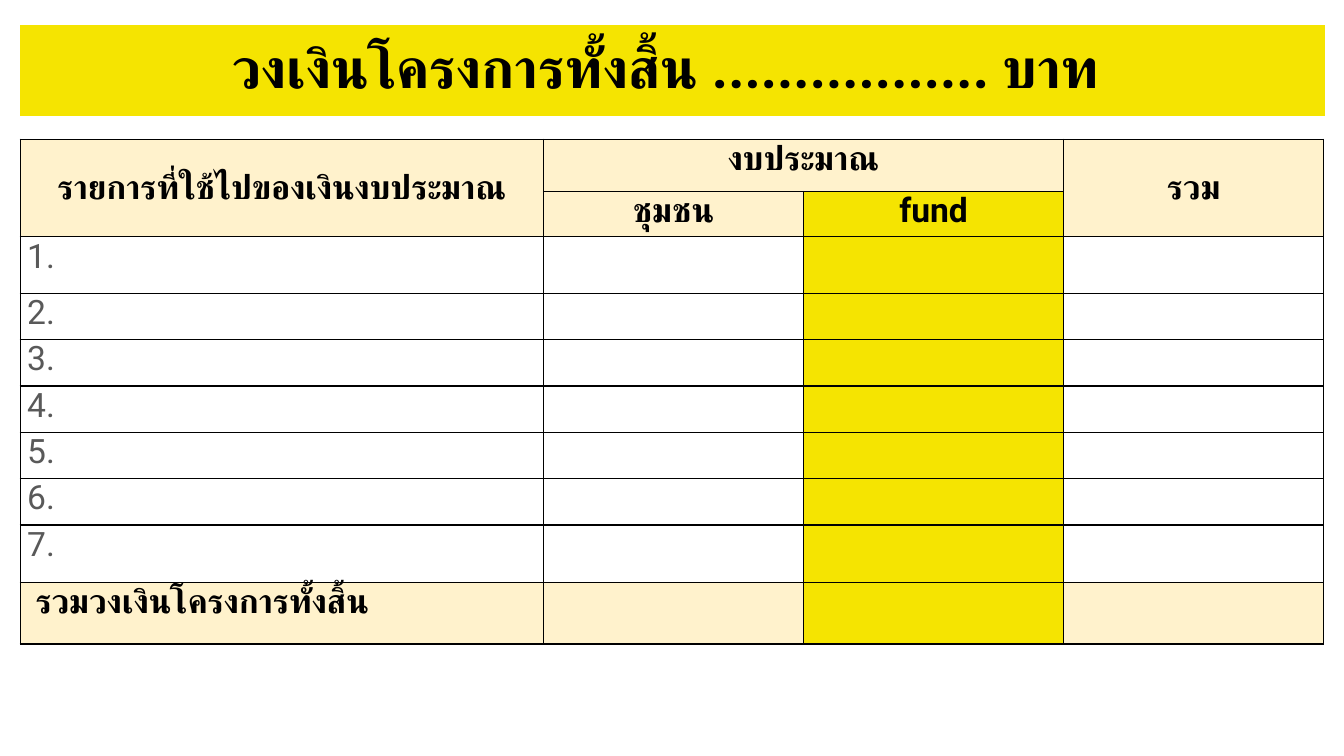
from lxml.etree import SubElement
from pptx import Presentation
from pptx.dml.color import RGBColor
from pptx.enum.shapes import MSO_SHAPE as Shape
from pptx.enum.text import MSO_ANCHOR as Anchor, PP_ALIGN as Align
from pptx.oxml.ns import qn
from pptx.util import Inches, Pt

COLORS = {"yellow": "F5E401", "cream": "FFF2CC", "black": "000000", "gray": "595959"}
FONT = "Roboto"
LEFT, WIDTH = 0.2, 12.94
COLUMNS = [5.19, 2.58, 2.58, 2.58]
ROWS = [0.52, 0.45, 0.56] + [0.46] * 5 + [0.57, 0.61]
FUND_COLUMN, TOTAL_ROW = 2, len(ROWS) - 1


class BudgetSlide:
    def __init__(self, slide):
        self.slide = slide

    def color(self, name):
        return RGBColor.from_string(COLORS[name])

    def add_text(self, frame, text, size, color="black", bold=True, align=Align.CENTER):
        paragraph = frame.paragraphs[0]
        paragraph.alignment = align
        run = paragraph.add_run()
        run.text = text
        run.font.name, run.font.size, run.font.bold = FONT, Pt(size), bold
        run.font.color.rgb = self.color(color)
        # Thai letters take the complex-script font
        SubElement(run.font._element, qn("a:cs"), typeface=FONT)
        return paragraph

    def banner(self, text, top, height):
        shape = self.slide.shapes.add_shape(
            Shape.RECTANGLE, Inches(LEFT), Inches(top), Inches(WIDTH), Inches(height))
        shape.shadow.inherit = False
        shape.fill.solid()
        shape.fill.fore_color.rgb = self.color("yellow")
        shape.line.fill.background()
        shape.text_frame.word_wrap = True
        shape.text_frame.vertical_anchor = Anchor.MIDDLE
        self.add_text(shape.text_frame, text, 40).line_spacing = 0.9

    def table(self, top):
        table = self.slide.shapes.add_table(
            len(ROWS), len(COLUMNS), Inches(LEFT), Inches(top),
            Inches(WIDTH), Inches(sum(ROWS))).table
        table.first_row = table.horz_banding = False
        for column, width in zip(table.columns, COLUMNS):
            column.width = Inches(width)
        for row, height in zip(table.rows, ROWS):
            row.height = Inches(height)
        return table

    def style_cell(self, cell, fill):
        cell.margin_left = cell.margin_right = Inches(0.07)
        cell.margin_top = cell.margin_bottom = 0
        self.border(cell)
        if fill:
            cell.fill.solid()
            cell.fill.fore_color.rgb = self.color(fill)
        else:
            cell.fill.background()

    def border(self, cell):
        properties = cell._tc.get_or_add_tcPr()
        for side in ("lnL", "lnR", "lnT", "lnB"):
            line = SubElement(properties, qn(f"a:{side}"), w=str(Pt(1)))
            solid = SubElement(line, qn("a:solidFill"))
            SubElement(solid, qn("a:srgbClr"), val=COLORS["black"])


def main():
    presentation = Presentation()
    presentation.slide_width, presentation.slide_height = Inches(13.33), Inches(7.5)
    budget = BudgetSlide(presentation.slides.add_slide(presentation.slide_layouts[6]))

    # Table grid and fills
    table = budget.table(1.38)
    for row in range(len(ROWS)):
        for column in range(len(COLUMNS)):
            if column == FUND_COLUMN and row > 0:
                fill = "yellow"
            else:
                fill = "cream" if row in (0, 1, TOTAL_ROW) else None
            budget.style_cell(table.cell(row, column), fill)

    # Header cells
    for column in (0, 3):
        table.cell(0, column).merge(table.cell(1, column))
        table.cell(0, column).vertical_anchor = Anchor.MIDDLE
    table.cell(0, 1).merge(table.cell(0, 2))
    headers = {(0, 0): "รายการที่ใช้ไปของเงินงบประมาณ", (0, 1): "งบประมาณ",
               (0, 3): "รวม", (1, 1): "ชุมชน", (1, 2): "fund"}
    for (row, column), text in headers.items():
        budget.add_text(table.cell(row, column).text_frame, text, 24)

    # Numbered items and total
    for number in range(1, 8):
        budget.add_text(table.cell(number + 1, 0).text_frame, f"{number}.", 24,
                        "gray", False, Align.LEFT)
    budget.add_text(table.cell(TOTAL_ROW, 0).text_frame, " รวมวงเงินโครงการทั้งสิ้น", 24,
                    align=Align.LEFT)

    # Title banner
    budget.banner("วงเงินโครงการทั้งสิ้น ................. บาท ", 0.25, 0.9)

    presentation.save("out.pptx")


if __name__ == "__main__":
    main()
